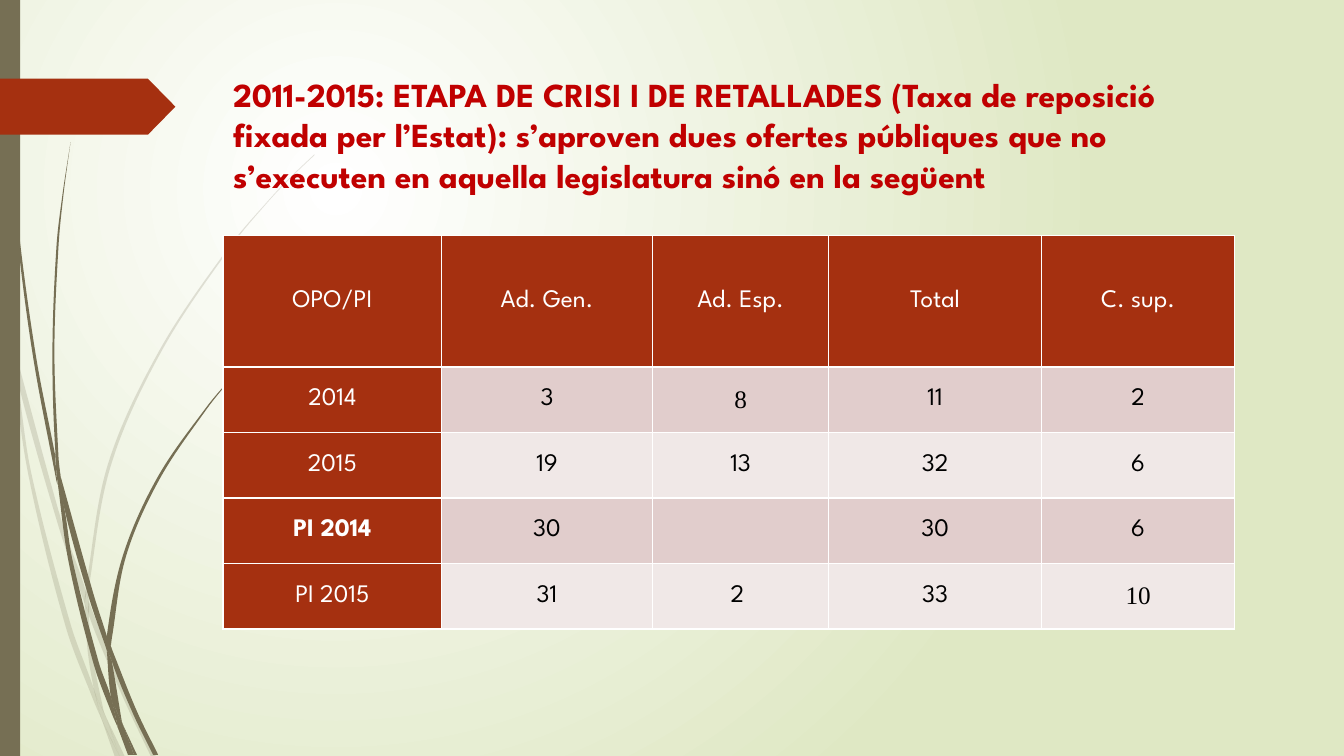
from dataclasses import dataclass
from math import hypot

from pptx import Presentation
from pptx.dml.color import RGBColor
from pptx.enum.shapes import MSO_SHAPE as Preset
from pptx.enum.text import MSO_ANCHOR as Anchor, MSO_AUTO_SIZE as AutoSize, PP_ALIGN as Align
from pptx.oxml import parse_xml
from pptx.oxml.ns import nsdecls, qn
from pptx.util import Pt

# Content
TITLE = ("2011-2015: ETAPA DE CRISI I DE RETALLADES (Taxa de reposició fixada per l’Estat): "
         "s’aproven dues ofertes públiques que no s’executen en aquella legislatura "
         "sinó en la següent")
ROWS = [
    ("OPO/PI", "Ad. Gen.", "Ad. Esp.", "Total", "C. sup."),
    ("2014", "3", "8", "11", "2"),
    ("2015", "19", "13", "32", "6"),
    ("PI 2014", "30", "", "30", "6"),
    ("PI 2015", "31", "2 ", "33", "10"),
]
SERIF_CELLS = {(1, 2), (4, 4)}
BOLD_CELLS = {(3, 0)}

# Grass blades: outline knots (x, y) on a fine grid
GRID = 0.72  # points per grid unit
PALE_BLADES = [
    [(11, 350), (9, 322), (0, 282), (0, 299), (10, 344)],
    [(58, 522), (84, 599), (85, 586), (62, 520), (14, 345), (17, 376)],
    [(92, 607), (88, 596), (88, 610), (123, 694), (150, 751), (155, 751), (127, 692)],
    [(119, 751), (124, 751), (105, 711)],
    [(93, 683), (70, 619), (31, 469), (17, 376), (11, 350), (28, 470), (65, 621), (92, 693),
     (101, 714), (99, 707)],
    [(84, 599), (87, 646), (93, 683), (96, 692), (105, 711), (103, 706), (91, 646), (88, 610),
     (88, 608)],
    [(88, 584), (110, 462), (160, 349), (229, 245), (268, 198), (290, 175), (312, 154),
     (312, 153), (289, 175), (268, 197), (228, 244), (158, 348), (107, 461), (85, 584),
     (85, 586), (88, 596)],
    [(101, 714), (114, 751), (119, 751)],
    [(88, 608), (88, 610), (88, 596), (85, 586), (84, 599)],
    [(96, 692), (93, 683), (99, 707), (101, 714), (119, 751), (105, 711)],
]
DARK_BLADES = [
    [(7, 110), (17, 233), (33, 355), (56, 477), (57, 481), (55, 457), (55, 453), (36, 355),
     (19, 232), (8, 109), (5, 48), (4, 0), (3, 0), (4, 48)],
    [(88, 592), (106, 645), (106, 633), (106, 631), (93, 590), (60, 472), (64, 505)],
    [(113, 649), (110, 641), (111, 656), (132, 708), (152, 749), (157, 749), (136, 706)],
    [(110, 691), (98, 657), (72, 556), (64, 505), (57, 477), (68, 557), (93, 659), (111, 708),
     (117, 722), (116, 717)],
    [(60, 472), (58, 453), (54, 349), (58, 245), (63, 193), (70, 141), (62, 193), (56, 245),
     (52, 349), (55, 449)],
    [(133, 749), (136, 749), (122, 719)],
    [(57, 477), (64, 505), (60, 472), (55, 449), (55, 453)],
    [(111, 633), (125, 552), (158, 476), (205, 406), (231, 374), (245, 359), (261, 344),
     (260, 344), (245, 358), (231, 373), (204, 405), (156, 474), (122, 551), (106, 631),
     (110, 641)],
    [(117, 722), (127, 749), (131, 749)],
    [(106, 645), (110, 691), (116, 706), (122, 719), (121, 716), (111, 656), (109, 651)],
    [(106, 645), (109, 651), (111, 656), (110, 641), (106, 631), (106, 633)],
    [(116, 706), (110, 691), (116, 717), (117, 722), (130, 749), (133, 749), (122, 719)],
]

# Layout
SLIDE_SIZE = (960, 540)
SIDE_BAR = (0, 0, 14.4, 540)
MARKER = (0, 56.2, 125.3, 40)
TITLE_BOX = (159.3, 49.3, 746.6, 100.8)
TABLE_ORIGIN = (159.3, 168.5)
COLUMN_WIDTHS = (156.2, 150.5, 126, 151.9, 138.2)
ROW_HEIGHTS = (93.6, 46.8, 46.8, 46.8, 46.8)


@dataclass(frozen=True)
class Theme:
    title: str = "C00000"
    accent: str = "A53010"
    olive: str = "766F54"
    white: str = "FFFFFF"
    black: str = "000000"
    meadow: str = "DFE8C4"
    bands: tuple = ("F0E8E7", "E1CDCC")
    font: str = "League Spartan"
    serif: str = "Times New Roman"
    title_size: int = 24
    cell_size: int = 18


THEME = Theme()


def paint(shape, color, opacity=100):
    shape.shadow.inherit = False
    shape.fill.solid()
    shape.fill.fore_color.rgb = RGBColor.from_string(color)
    shape.line.fill.background()
    if opacity < 100:
        tint = shape.fill._xPr.find(".//" + qn("a:srgbClr"))
        tint.append(parse_xml(f'<a:alpha {nsdecls("a")} val="{opacity * 1000}"/>'))


def add_run(paragraph, text, font, size, color, bold):
    run = paragraph.add_run()
    run.text = text
    run.font.name = font
    run.font.size = Pt(size)
    run.font.bold = bold
    run.font.color.rgb = RGBColor.from_string(color)


def handle(before, knot, after, far):
    """Control point from knot towards far; sharp corners stay sharp."""
    ux, uy = knot[0] - before[0], knot[1] - before[1]
    vx, vy = after[0] - knot[0], after[1] - knot[1]
    reach = hypot(far[0] - knot[0], far[1] - knot[1]) / 3
    if ux * vx + uy * vy < 0.8 * hypot(ux, uy) * hypot(vx, vy):
        dx, dy = far[0] - knot[0], far[1] - knot[1]
    else:
        dx, dy = after[0] - before[0], after[1] - before[1]
        if far == before:
            dx, dy = -dx, -dy
    scale = reach / hypot(dx, dy)
    return knot[0] + dx * scale, knot[1] + dy * scale


def add_blade(slide, knots, opacity):
    outline = [(Pt(x * GRID), Pt(y * GRID)) for x, y in knots]
    builder = slide.shapes.build_freeform(*outline[0])
    builder.add_line_segments(outline[1:] + outline[:1], close=True)
    blade = builder.convert_to_shape()
    paint(blade, THEME.olive, opacity)
    # Turn the straight sides into curves
    count = len(outline)
    for index, side in enumerate(list(blade.element.iter(qn("a:lnTo")))):
        before, start, end, after = (outline[(index + k) % count] for k in (-1, 0, 1, 2))
        controls = (handle(before, start, end, end), handle(start, end, after, start), end)
        points = "".join(f'<a:pt x="{round(x - blade.left)}" y="{round(y - blade.top)}"/>'
                         for x, y in controls)
        side.getparent().replace(side, parse_xml(
            f'<a:cubicBezTo {nsdecls("a")}>{points}</a:cubicBezTo>'))


def add_background(slide):
    slide.background.fill.solid()
    properties = slide.element.find(".//" + qn("p:bgPr"))
    properties.replace(properties[0], parse_xml(
        f'<a:gradFill {nsdecls("a")} rotWithShape="1"><a:gsLst>'
        f'<a:gs pos="0"><a:srgbClr val="{THEME.white}"/></a:gs>'
        f'<a:gs pos="100000"><a:srgbClr val="{THEME.meadow}"/></a:gs></a:gsLst>'
        '<a:path path="circle"><a:fillToRect l="50000" t="50000" r="100000" b="100000"/>'
        '</a:path></a:gradFill>'))


def add_title(slide):
    title = slide.shapes.title
    title.left, title.top, title.width, title.height = map(Pt, TITLE_BOX)
    frame = title.text_frame
    frame.word_wrap = True
    frame.auto_size = AutoSize.NONE
    frame.vertical_anchor = Anchor.TOP
    paragraph = frame.paragraphs[0]
    paragraph.alignment = Align.LEFT
    add_run(paragraph, TITLE, THEME.font, THEME.title_size, THEME.title, True)
    title.element.getparent().append(title.element)  # in front of the blades


def format_cell(cell, row, column, text):
    heading = row == 0 or column == 0
    cell.margin_left = cell.margin_right = Pt(5)
    cell.margin_top = cell.margin_bottom = Pt(0)
    cell.vertical_anchor = Anchor.MIDDLE
    paragraph = cell.text_frame.paragraphs[0]
    paragraph.alignment = Align.CENTER
    if text:
        add_run(paragraph, text, THEME.serif if (row, column) in SERIF_CELLS else THEME.font,
                THEME.cell_size, THEME.white if heading else THEME.black,
                (row, column) in BOLD_CELLS)
    for side in ("lnL", "lnR", "lnT", "lnB"):
        cell._tc.get_or_add_tcPr().append(parse_xml(
            f'<a:{side} {nsdecls("a")} w="{Pt(1)}"><a:solidFill>'
            f'<a:srgbClr val="{THEME.white}"/></a:solidFill></a:{side}>'))
    cell.fill.solid()
    cell.fill.fore_color.rgb = RGBColor.from_string(
        THEME.accent if heading else THEME.bands[row % 2])


def add_offers_table(slide):
    size = (sum(COLUMN_WIDTHS), sum(ROW_HEIGHTS))
    table = slide.shapes.add_table(len(ROWS), len(ROWS[0]),
                                   *map(Pt, TABLE_ORIGIN + size)).table
    table.first_row = table.horz_banding = False
    for column, width in zip(table.columns, COLUMN_WIDTHS):
        column.width = Pt(width)
    for row, height in zip(table.rows, ROW_HEIGHTS):
        row.height = Pt(height)
    for row, texts in enumerate(ROWS):
        for column, text in enumerate(texts):
            format_cell(table.cell(row, column), row, column, text)


def main():
    presentation = Presentation()
    presentation.slide_width, presentation.slide_height = map(Pt, SLIDE_SIZE)
    slide = presentation.slides.add_slide(presentation.slide_layouts[5])
    add_background(slide)
    # Decoration on the left
    for blades, opacity in ((PALE_BLADES, 20), (DARK_BLADES, 100)):
        for knots in blades:
            add_blade(slide, knots, opacity)
    paint(slide.shapes.add_shape(Preset.RECTANGLE, *map(Pt, SIDE_BAR)), THEME.olive)
    marker = slide.shapes.add_shape(Preset.PENTAGON, *map(Pt, MARKER))
    marker.adjustments[0] = 0.49
    paint(marker, THEME.accent)
    # Title and table
    add_title(slide)
    add_offers_table(slide)
    presentation.save("out.pptx")


if __name__ == "__main__":
    main()
